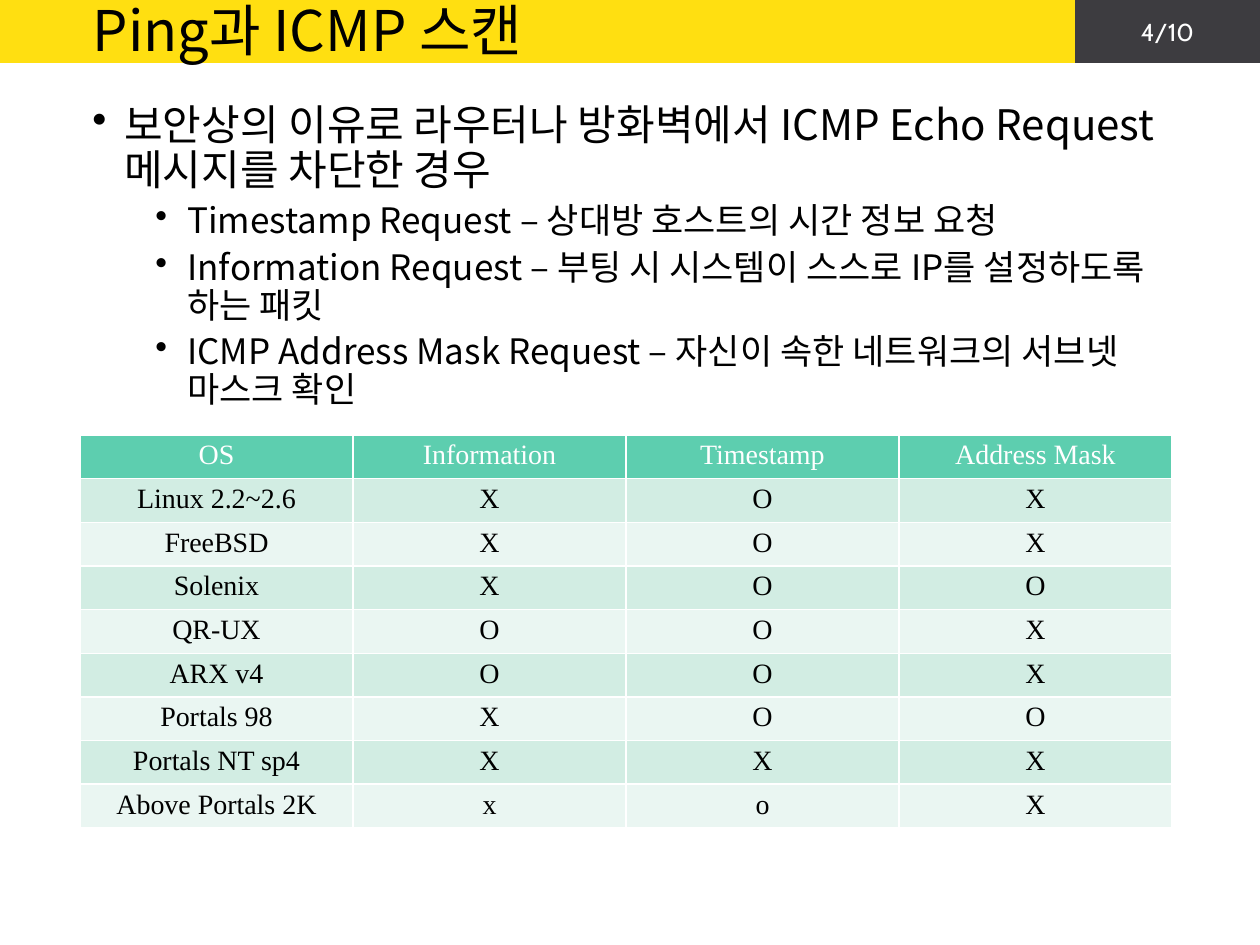
from lxml.etree import SubElement
from pptx import Presentation
from pptx.dml.color import RGBColor
from pptx.enum.shapes import MSO_SHAPE as Shape
from pptx.enum.text import MSO_ANCHOR as Anchor, PP_ALIGN as Align
from pptx.oxml.ns import qn
from pptx.util import Pt

YELLOW = RGBColor(0xFF, 0xDF, 0x11)
CHARCOAL = RGBColor(0x3D, 0x3C, 0x40)
WHITE = RGBColor(0xFF, 0xFF, 0xFF)
BLACK = RGBColor(0x00, 0x00, 0x00)
GREEN = RGBColor(0x5D, 0xCE, 0xAF)
BANDS = [RGBColor(0xD2, 0xED, 0xE3), RGBColor(0xEA, 0xF6, 0xF2)]
KOREAN_FONT = "Noto Sans CJK KR"


def px(length):
    """Turn slide pixels (126 to the inch) into EMU."""
    return length * 914400 // 126


def write(paragraph, text, font, size, color):
    """Add one run, naming the font for Latin and East Asian letters."""
    run = paragraph.add_run()
    run.text = text
    run.font.size = Pt(size)
    run.font.color.rgb = color
    run.font.name = font
    SubElement(run.font._element, qn("a:ea"), typeface=font)


presentation = Presentation()
presentation.slide_width, presentation.slide_height = px(1260), px(945)
slide = presentation.slides.add_slide(presentation.slide_layouts[5])
shapes = slide.shapes

# Header band and page number
for left, width, color in [(0, 1076, YELLOW), (1075, 185, CHARCOAL)]:
    bar = shapes.add_shape(Shape.RECTANGLE, px(left), 0, px(width), px(63))
    bar.shadow.inherit = False
    bar.fill.solid()
    bar.fill.fore_color.rgb = color
    bar.line.fill.background()
bar.text_frame.vertical_anchor = Anchor.MIDDLE
page_number = bar.text_frame.paragraphs[0]
page_number.alignment = Align.CENTER
write(page_number, "4/10", "Cabin", 14, WHITE)

# Title, brought in front of the band
title = shapes.title
title.left, title.top, title.width, title.height = px(80), px(-3), px(994), px(62)
title.text_frame.vertical_anchor = Anchor.TOP
heading = title.text_frame.paragraphs[0]
heading.alignment = Align.LEFT
heading.line_spacing = 0.9
write(heading, "Ping과 ICMP 스캔", KOREAN_FONT, 32, BLACK)
bar._element.addnext(title._element)

# Bullets
LEVELS = [
    {"size": 24, "margin": 32, "space": 0},
    {"size": 20, "margin": 95, "space": 5},
]
BULLETS = [
    (0, "보안상의 이유로 라우터나 방화벽에서 ICMP Echo Request 메시지를 차단한 경우"),
    (1, "Timestamp Request – 상대방 호스트의 시간 정보 요청"),
    (1, "Information Request – 부팅 시 시스템이 스스로 IP를 설정하도록 하는 패킷"),
    (1, "ICMP Address Mask Request – 자신이 속한 네트워크의 서브넷 마스크 확인"),
]
body = shapes.add_textbox(px(80), px(98), px(1098), px(753)).text_frame
body.word_wrap = True
for index, (level, text) in enumerate(BULLETS):
    paragraph = body.add_paragraph() if index else body.paragraphs[0]
    style = LEVELS[level]
    paragraph.level = level
    paragraph.line_spacing = 0.9
    paragraph.space_before = Pt(style["space"])
    properties = paragraph._p.get_or_add_pPr()
    properties.set("marL", str(px(style["margin"])))
    properties.set("indent", str(px(-32)))
    SubElement(properties, qn("a:buChar"), char="•")
    write(paragraph, text, KOREAN_FONT, style["size"], BLACK)

# Table of systems that answer each request
ROWS = [
    ("OS", "Information", "Timestamp", "Address Mask"),
    ("Linux 2.2~2.6", "X", "O", "X"),
    ("FreeBSD", "X", "O", "X"),
    ("Solenix", "X", "O", "O"),
    ("QR-UX", "O", "O", "X"),
    ("ARX v4", "O", "O", "X"),
    ("Portals 98", "X", "O", "O"),
    ("Portals NT sp4", "X", "X", "X"),
    ("Above Portals 2K", "x", "o", "X"),
]
table = shapes.add_table(len(ROWS), 4, px(80), px(435), px(1092), px(393)).table
for row, values in enumerate(ROWS):
    for column, value in enumerate(values):
        cell = table.cell(row, column)
        cell.margin_top = cell.margin_bottom = px(5)
        paragraph = cell.text_frame.paragraphs[0]
        paragraph.alignment = Align.CENTER
        write(paragraph, value, "Times New Roman", 16, BLACK if row else WHITE)
        cell_properties = cell._tc.get_or_add_tcPr()
        for side in ("lnL", "lnR", "lnT", "lnB"):
            border = SubElement(cell_properties, qn(f"a:{side}"), w=str(Pt(1)))
            fill = SubElement(border, qn("a:solidFill"))
            SubElement(fill, qn("a:srgbClr"), val=str(WHITE))
        cell.fill.solid()
        cell.fill.fore_color.rgb = BANDS[(row - 1) % 2] if row else GREEN

presentation.save("out.pptx")
